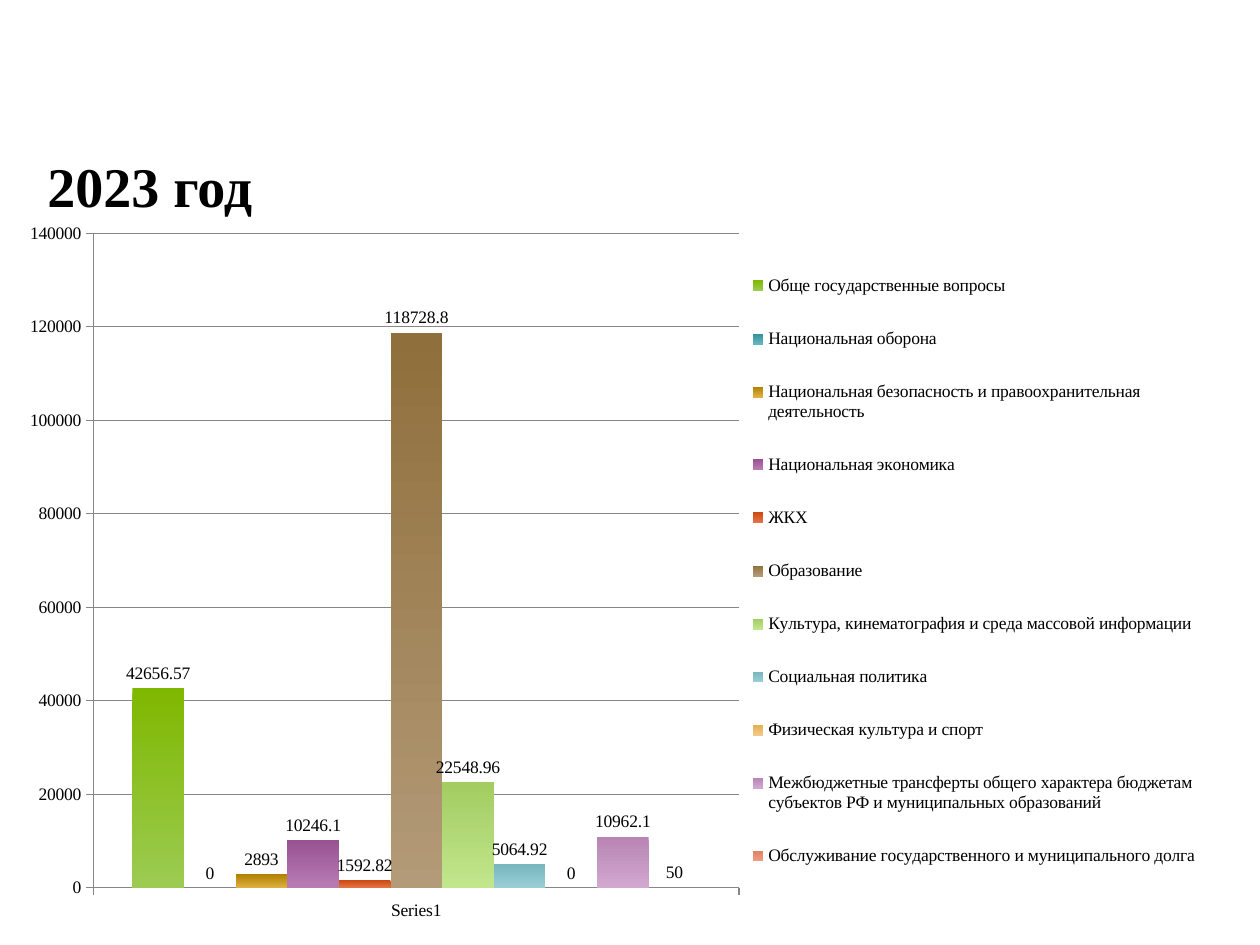
import pptx
import pptx.chart.data
import pptx.dml.color
import pptx.enum.chart
import pptx.enum.text
import pptx.oxml
import pptx.oxml.ns
import pptx.util

PX = 914400 / 126
FONT = "Times New Roman"
COLORS = {"text": "000000", "line": "868686"}

# Department, spending, top and bottom colour of the column
SPENDING = [
    ("Обще государственные вопросы", 42656.57, "7FB800", "9CCB52"),
    ("Национальная оборона", 0, "2F8F99", "65B5BE"),
    ("Национальная безопасность и правоохранительная деятельность", 2893, "B08000", "DDB040"),
    ("Национальная экономика", 10246.1, "985293", "B87CB4"),
    ("ЖКХ", 1592.82, "CC4A12", "E57445"),
    ("Образование", 118728.8, "8F6F3B", "B39A78"),
    ("Культура, кинематография и среда массовой информации", 22548.96, "A3CC62", "C1E68C"),
    ("Социальная политика", 5064.92, "78B6BF", "98CED5"),
    ("Физическая культура и спорт", 0, "E2B050", "F2C888"),
    ("Межбюджетные трансферты общего характера бюджетам субъектов РФ "
     "и муниципальных образований", 10962.1, "B885B5", "D2A8D0"),
    ("Обслуживание государственного и муниципального долга", 50, "DF8060", "F09C84"),
]


def rgb(value):
    return pptx.dml.color.RGBColor.from_string(value)


def set_layout(element, left, top, width, height, inner=False):
    """Place a chart part by fractions of the chart area."""
    for old in element.findall(pptx.oxml.ns.qn("c:layout")):
        element.remove(old)
    target = '<c:layoutTarget val="inner"/>' if inner else ""
    layout = pptx.oxml.parse_xml(
        f'<c:layout {pptx.oxml.ns.nsdecls("c")}><c:manualLayout>{target}'
        '<c:xMode val="edge"/><c:yMode val="edge"/>'
        f'<c:x val="{left}"/><c:y val="{top}"/><c:w val="{width}"/><c:h val="{height}"/>'
        '</c:manualLayout></c:layout>')
    element.insert(0 if inner else 1, layout)


deck = pptx.Presentation()
deck.slide_width = round(1260 * PX)
deck.slide_height = round(945 * PX)
slide = deck.slides.add_slide(deck.slide_layouts[6])

# Chart: one series for each department
data = pptx.chart.data.CategoryChartData(number_format="General")
data.categories = ["Series1"]
for name, value, _, _ in SPENDING:
    data.add_series(name, [value])
chart = slide.shapes.add_chart(
    pptx.enum.chart.XL_CHART_TYPE.COLUMN_CLUSTERED,
    *[round(length * PX) for length in (15, 214, 1191, 714)], data).chart
chart.has_title = False
chart.font.name = FONT
chart.font.size = pptx.util.Pt(10)
chart.font.color.rgb = rgb(COLORS["text"])
set_layout(chart.plots[0]._element.getparent(), 0.066, 0.027, 0.542, 0.917, inner=True)

# Columns with value labels
plot = chart.plots[0]
plot.gap_width = 150
plot.overlap = 0
plot.vary_by_categories = False
for series, (_, _, top_color, bottom_color) in zip(plot.series, SPENDING):
    fill = series.format.fill
    fill.gradient()
    fill.gradient_angle = 270
    for stop, color in zip(fill.gradient_stops, (top_color, bottom_color)):
        stop.color.rgb = rgb(color)
    series.invert_if_negative = False
    labels = series.data_labels
    labels.show_value = True
    labels.position = pptx.enum.chart.XL_LABEL_POSITION.OUTSIDE_END

# Axes
value_axis = chart.value_axis
value_axis.minimum_scale = 0
value_axis.maximum_scale = 140000
value_axis.major_unit = 20000
value_axis.has_major_gridlines = True
for part in (value_axis, chart.category_axis, value_axis.major_gridlines):
    part.format.line.color.rgb = rgb(COLORS["line"])
    part.format.line.width = pptx.util.Pt(0.75)
for axis in (value_axis, chart.category_axis):
    axis.major_tick_mark = pptx.enum.chart.XL_TICK_MARK.OUTSIDE

# Legend
chart.has_legend = True
legend = chart.legend
legend.position = pptx.enum.chart.XL_LEGEND_POSITION.RIGHT
legend.include_in_layout = False
legend.font.size = pptx.util.Pt(10)
set_layout(legend._element, 0.61, 0.04, 0.39, 0.92)

# Year heading
box = slide.shapes.add_textbox(*[round(length * PX) for length in (35, 145, 367, 81)])
frame = box.text_frame
frame.word_wrap = True
frame.auto_size = pptx.enum.text.MSO_AUTO_SIZE.SHAPE_TO_FIT_TEXT
para = frame.paragraphs[0]
para.text = "2023 год"
para.font.name = FONT
para.font.size = pptx.util.Pt(32)
para.font.bold = True
para.font.color.rgb = rgb(COLORS["text"])

deck.save("out.pptx")
